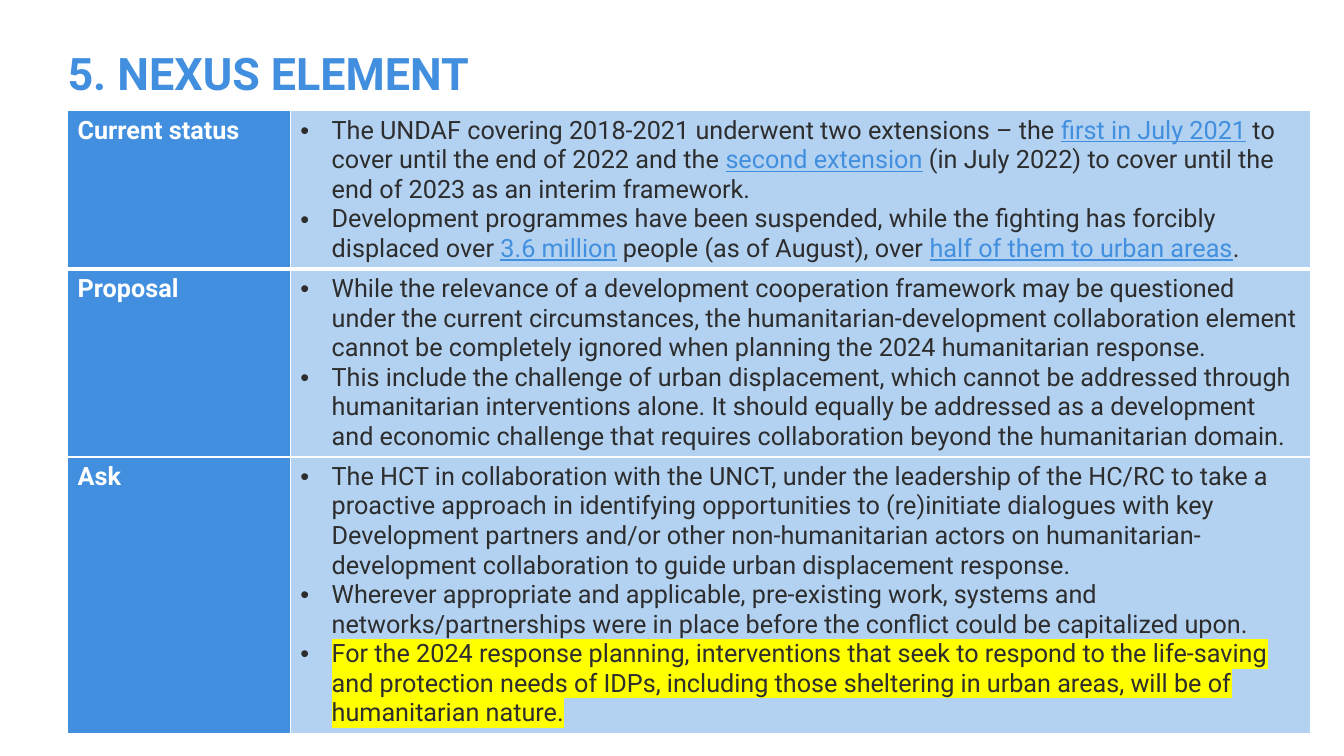
from dataclasses import dataclass

from lxml import etree
from pptx import Presentation
from pptx import util as u
from pptx.dml.color import RGBColor
from pptx.enum import text
from pptx.oxml.ns import qn


@dataclass(frozen=True)
class Theme:
    font: str = "Roboto"
    title_size: int = 32
    body_size: int = 18
    blue: str = "418FDE"
    pale_blue: str = "B3D2F2"
    ink: str = "2D2D2D"
    white: str = "FFFFFF"
    yellow: str = "FFFF00"


THEME = Theme()
SLIDE_WIDTH, SLIDE_HEIGHT = 13.33, 7.5
LEFT = 0.67
COLUMN_WIDTHS = (2.21, 10.12)
LINE_HEIGHT, CELL_PADDING = 0.294, 0.1
BULLET_INDENT = 0.31
LINK = {"color": THEME.blue, "underline": True}
MARKED = {"highlight": THEME.yellow}

# Each row: label, number of text lines, bullets made of (wording, format) runs.
ROWS = [
    ("Current status", 5, [
        [("The UNDAF covering 2018-2021 underwent two extensions – the ", {}),
         ("first in July 2021", LINK),
         (" to cover until the end of 2022 and the ", {}),
         ("second extension", LINK),
         (" (in July 2022) to cover until the end of 2023 as an interim framework.", {})],
        [("Development programmes have been suspended, while the fighting has forcibly "
          "displaced over ", {}),
         ("3.6 million", LINK),
         (" people (as of August), over ", {}),
         ("half of them to urban areas", LINK),
         (".", {})],
    ]),
    ("Proposal", 6, [
        [("While the relevance of a development cooperation framework may be questioned "
          "under the current circumstances, the humanitarian-development collaboration "
          "element cannot be completely ignored when planning the 2024 humanitarian "
          "response.", {})],
        [("This include the challenge of urban displacement, which cannot be addressed "
          "through humanitarian interventions alone. It should equally be addressed as a "
          "development and economic challenge that requires collaboration beyond the "
          "humanitarian domain.", {})],
    ]),
    ("Ask", 9, [
        [("The HCT in collaboration with the UNCT, under the leadership of the HC/RC to "
          "take a proactive approach in identifying opportunities to (re)initiate "
          "dialogues with key Development partners and/or other non-humanitarian actors "
          "on humanitarian-development collaboration to guide urban displacement "
          "response.", {})],
        [("Wherever appropriate and applicable, pre-existing work, systems and "
          "networks/partnerships were in place before the conflict could be capitalized "
          "upon.", {})],
        [("For the 2024 response planning, interventions that seek to respond to the "
          "life-saving and protection needs of IDPs, including those sheltering in urban "
          "areas, will be of humanitarian nature.", MARKED)],
    ]),
]


def add_text(paragraph, wording, size=THEME.body_size, color=THEME.ink, bold=False,
             underline=False, highlight=None):
    run = paragraph.add_run()
    run.text = wording
    font = run.font
    font.name, font.size = THEME.font, u.Pt(size)
    font.bold, font.underline = bold, underline
    font.color.rgb = RGBColor.from_string(color)
    if highlight:
        mark = etree.Element(qn("a:highlight"))
        etree.SubElement(mark, qn("a:srgbClr"), val=highlight)
        run._r.rPr.find(qn("a:solidFill")).addnext(mark)


def set_bullet(paragraph):
    properties = paragraph._p.get_or_add_pPr()
    indent = u.Inches(BULLET_INDENT)
    properties.set("marL", str(indent))
    properties.set("indent", str(-indent))
    etree.SubElement(properties, qn("a:buFont"), typeface="Arial")
    etree.SubElement(properties, qn("a:buChar"), char="•")


def set_borders(cell, **widths):
    """Draw white borders; widths are points keyed by side: L, R, T, B."""
    properties = cell._tc.get_or_add_tcPr()
    for index, (side, width) in enumerate(widths.items()):
        line = etree.Element(qn(f"a:ln{side}"), w=str(u.Pt(width)))
        fill = etree.SubElement(line, qn("a:solidFill"))
        etree.SubElement(fill, qn("a:srgbClr"), val=THEME.white)
        properties.insert(index, line)


def fill_cell(cell, color):
    cell.fill.solid()
    cell.fill.fore_color.rgb = RGBColor.from_string(color)


def add_title(slide, wording):
    title = slide.shapes.title
    title.left, title.top = u.Inches(LEFT), u.Inches(0.51)
    title.width, title.height = u.Inches(9.38), u.Inches(0.48)
    frame = title.text_frame
    frame.margin_left = frame.margin_right = frame.margin_top = frame.margin_bottom = 0
    frame.vertical_anchor = text.MSO_ANCHOR.MIDDLE
    frame.auto_size = text.MSO_AUTO_SIZE.NONE
    paragraph = frame.paragraphs[0]
    paragraph.alignment = text.PP_ALIGN.LEFT
    paragraph.line_spacing = 0.9
    add_text(paragraph, wording, size=THEME.title_size, color=THEME.blue, bold=True)


def add_status_table(slide, rows):
    heights = [lines * LINE_HEIGHT + CELL_PADDING for _, lines, _ in rows]
    table = slide.shapes.add_table(
        len(rows), len(COLUMN_WIDTHS), u.Inches(LEFT), u.Inches(1.1),
        u.Inches(sum(COLUMN_WIDTHS)), u.Inches(sum(heights))).table
    table.first_row = table.horz_banding = False
    for column, width in zip(table.columns, COLUMN_WIDTHS):
        column.width = u.Inches(width)

    for index, (label, _, bullets) in enumerate(rows):
        table.rows[index].height = u.Inches(heights[index])
        label_cell, body_cell = table.cell(index, 0), table.cell(index, 1)
        for cell, color in ((label_cell, THEME.blue), (body_cell, THEME.pale_blue)):
            fill_cell(cell, color)
            set_borders(cell, L=1, R=1, T=3 if index == 1 else 1, B=3 if index == 0 else 1)
        add_text(label_cell.text_frame.paragraphs[0], label, color=THEME.white, bold=True)

        frame = body_cell.text_frame
        for number, runs in enumerate(bullets):
            paragraph = frame.add_paragraph() if number else frame.paragraphs[0]
            set_bullet(paragraph)
            for wording, style in runs:
                add_text(paragraph, wording, **style)


def main():
    presentation = Presentation()
    presentation.slide_width = u.Inches(SLIDE_WIDTH)
    presentation.slide_height = u.Inches(SLIDE_HEIGHT)
    slide = presentation.slides.add_slide(presentation.slide_layouts.get_by_name("Title Only"))
    add_title(slide, "5. NEXUS ELEMENT")
    add_status_table(slide, ROWS)
    presentation.save("out.pptx")


if __name__ == "__main__":
    main()
